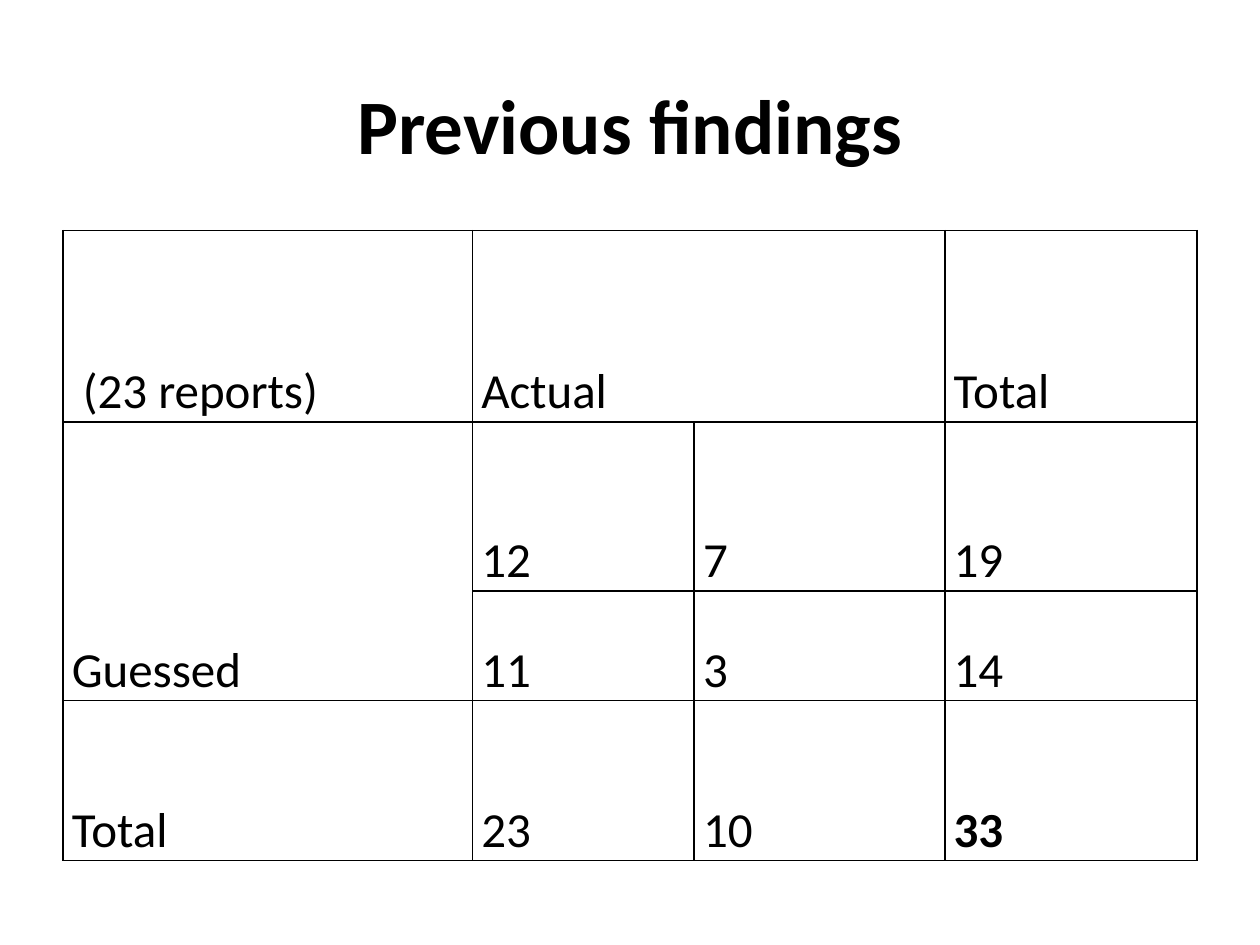
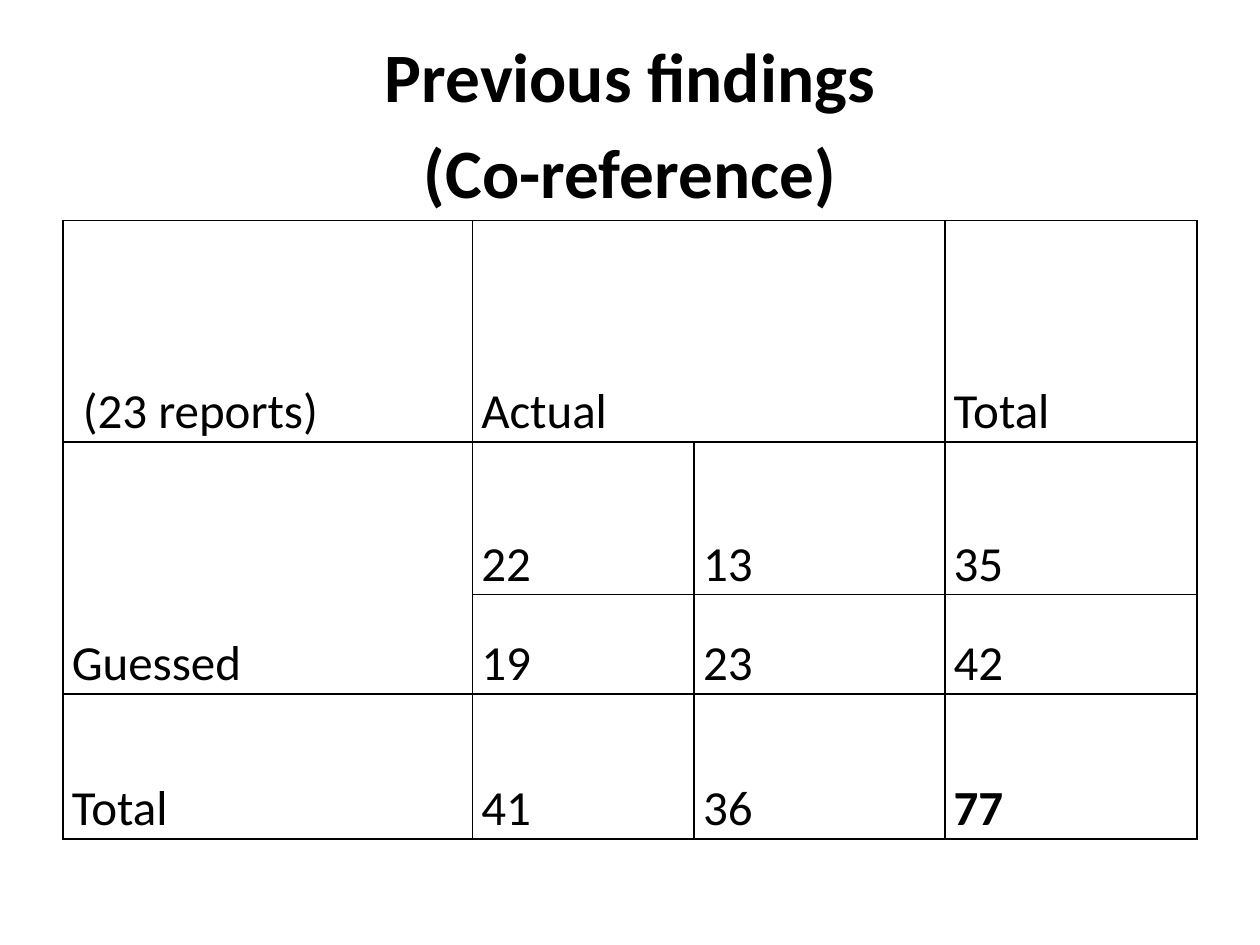
from dataclasses import dataclass

from lxml import etree
from pptx import Presentation
from pptx import util as u
from pptx.dml.color import RGBColor
from pptx.enum import text
from pptx.oxml.ns import qn


@dataclass(frozen=True)
class Theme:
    """Colours, type sizes and spacing shared by all slides."""
    font: str = "Calibri"
    ink: str = "000000"
    paper: str = "FFFFFF"
    head: float = 44
    tight: float = 39.6
    body: float = 28
    rule: float = 1
    lead: float = 1.15
    after: float = 10


class Deck:
    """Slides drawn on a grid of 40 columns by 30 rows."""

    def __init__(self, theme):
        self.theme = theme
        self.prs = Presentation()
        self.prs.slide_width = u.Inches(10)
        self.prs.slide_height = u.Inches(7.5)
        self.slide = None

    def x(self, cols):
        """Return the length of some grid columns."""
        return round(self.prs.slide_width * cols / 40)

    def y(self, rows):
        """Return the length of some grid rows."""
        return round(self.prs.slide_height * rows / 30)

    def page(self):
        """Start a blank slide."""
        self.slide = self.prs.slides.add_slide(self.prs.slide_layouts[6])
        fill = self.slide.background.fill
        fill.solid()
        fill.fore_color.rgb = RGBColor.from_string(self.theme.paper)

    def label(self, frame, lines, size, bold=False, align=text.PP_ALIGN.LEFT):
        """Fill a text frame with one paragraph, a run to each line."""
        para = frame.paragraphs[0]
        para.alignment = align
        para.line_spacing = self.theme.lead
        para.space_after = u.Pt(self.theme.after)
        for i, line in enumerate(lines):
            if i:
                para.add_line_break()
            run = para.add_run()
            run.text = line
            run.font.name = self.theme.font
            run.font.size = u.Pt(size)
            run.font.bold = bold
            run.font.color.rgb = RGBColor.from_string(self.theme.ink)

    def title(self, *lines):
        """Add the centred title, smaller when it has two lines."""
        box = self.slide.shapes.add_textbox(
            self.x(2), self.y(1.2), self.x(36), self.y(5))
        frame = box.text_frame
        frame.word_wrap = True
        frame.vertical_anchor = text.MSO_ANCHOR.MIDDLE
        size = self.theme.tight if len(lines) > 1 else self.theme.head
        self.label(frame, lines, size, True, text.PP_ALIGN.CENTER)

    def edge(self, cell):
        """Rule all four sides of a cell."""
        props = cell._tc.get_or_add_tcPr()
        for i, side in enumerate(("lnL", "lnR", "lnT", "lnB")):
            line = etree.Element(qn(f"a:{side}"), w=str(u.Pt(self.theme.rule)))
            fill = etree.SubElement(line, qn("a:solidFill"))
            etree.SubElement(fill, qn("a:srgbClr"), val=self.theme.ink)
            props.insert(i, line)

    def cell(self, cell, word, bold):
        """Style a table cell and set its word."""
        cell.fill.background()
        cell.vertical_anchor = text.MSO_ANCHOR.BOTTOM
        cell.margin_left = cell.margin_right = u.Inches(0.07)
        cell.margin_top, cell.margin_bottom = u.Inches(0.01), 0
        self.edge(cell)
        if word:
            self.label(cell.text_frame, [word], self.theme.body, bold)

    def cross(self, top, rows, counts):
        """Add a table of guessed against actual counts with its sums."""
        cols = (13, 7.04, 7.96, 8)
        full = [(*row, sum(row)) for row in counts]
        full.append(tuple(map(sum, zip(*full))))
        grid = [(" (23 reports)", "Actual", "", "Total")]
        for name, nums in zip(("Guessed", "", "Total"), full):
            grid.append((name, *map(str, nums)))
        table = self.slide.shapes.add_table(
            len(rows), len(cols), self.x(2), self.y(top),
            self.x(sum(cols)), self.y(sum(rows))).table
        table.first_row = table.horz_banding = False
        for col, wide in zip(table.columns, cols):
            col.width = self.x(wide)
        for row, high in zip(table.rows, rows):
            row.height = self.y(high)
        table.cell(0, 1).merge(table.cell(0, 2))
        table.cell(1, 0).merge(table.cell(2, 0))
        last = len(rows) - 1, len(cols) - 1
        for r, words in enumerate(grid):
            for c, word in enumerate(words):
                self.cell(table.cell(r, c), word, (r, c) == last)


def main():
    """Build and save both slides."""
    deck = Deck(Theme())
    deck.page()
    deck.title("Previous findings")
    deck.cross(7.32, (6.08, 5.36, 3.48, 5.08), [(12, 7), (11, 3)])
    deck.page()
    deck.title("Previous findings", "(Co-reference)")
    deck.cross(7, (7.04, 4.84, 3.16, 4.6), [(22, 13), (19, 23)])
    deck.prs.save("out.pptx")


if __name__ == "__main__":
    main()
